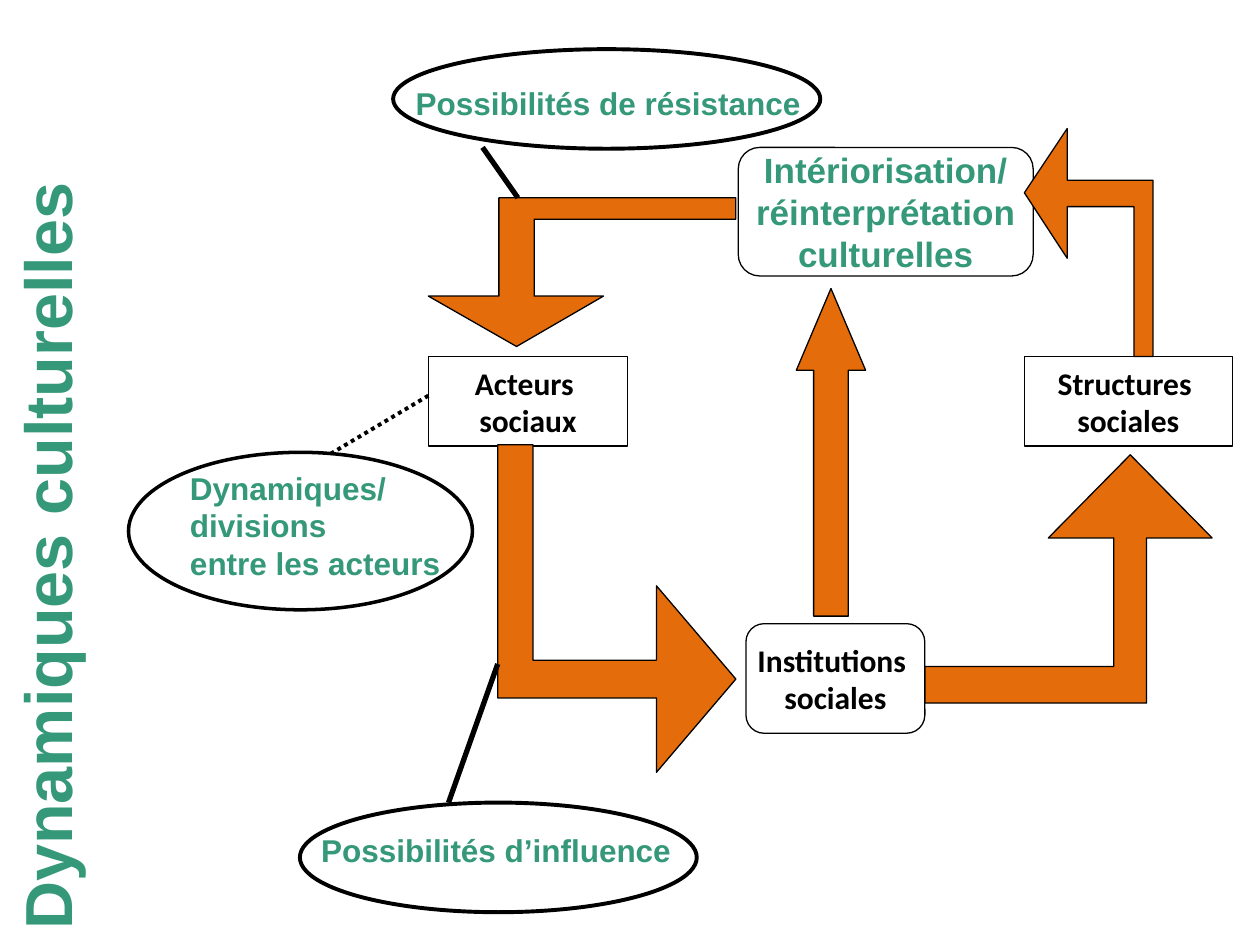
"""Build the "Dynamiques culturelles" cycle slide."""
from dataclasses import dataclass

from pptx import Presentation
from pptx.dml.color import RGBColor
from pptx.enum.dml import MSO_LINE
from pptx.enum.shapes import MSO_CONNECTOR, MSO_SHAPE as Preset
from pptx.enum.text import MSO_ANCHOR, MSO_AUTO_SIZE, PP_ALIGN
from pptx.oxml.ns import qn
from pptx.util import Inches, Pt
from lxml.etree import SubElement

GREEN, ORANGE, BLACK, WHITE = "349879", "E46C0A", "000000", "FFFFFF"
Point = tuple[float, float]
Bounds = tuple[float, float, float, float]


@dataclass
class Node:
    bounds: Bounds
    lines: list[str]
    preset: Preset
    font: str = "Calibri"
    size: int = 18
    color: str = BLACK


@dataclass
class Label:
    bounds: Bounds
    lines: list[str]
    size: int = 18
    wrap: bool = False
    align: PP_ALIGN = PP_ALIGN.LEFT
    vertical: bool = False


@dataclass
class Oval:
    bounds: Bounds
    weight: float = 2.25


@dataclass
class Link:
    start: Point
    end: Point
    weight: float = 3
    dash: MSO_LINE | None = None


NODES = [
    Node((3.4, 2.83, 1.58, 0.71), ["Acteurs ", "sociaux"], Preset.RECTANGLE),
    Node((8.13, 2.83, 1.65, 0.71), ["Structures ", "sociales"], Preset.RECTANGLE),
    Node((5.86, 1.17, 2.34, 1.02), ["Intériorisation/", "réinterprétation", "culturelles"],
         Preset.FLOWCHART_ALTERNATE_PROCESS, "Arial", 20, GREEN),
    Node((5.92, 4.95, 1.42, 0.87), ["Institutions ", "sociales"],
         Preset.FLOWCHART_ALTERNATE_PROCESS),
]
BENT_ARROWS: list[list[Point]] = [
    [(8.97, 3.61), (8.32, 4.27), (8.84, 4.27), (8.84, 5.29), (7.34, 5.29),
     (7.34, 5.58), (9.1, 5.58), (9.1, 4.27), (9.62, 4.27)],
    [(5.84, 5.39), (5.21, 4.65), (5.21, 5.24), (4.23, 5.24), (4.23, 3.53),
     (3.95, 3.53), (3.95, 5.54), (5.21, 5.54), (5.21, 6.13)],
    [(8.13, 1.53), (8.47, 2.05), (8.47, 1.64), (9, 1.64), (9, 2.83),
     (9.15, 2.83), (9.15, 1.43), (8.47, 1.43), (8.47, 1.02)],
    [(4.1, 2.75), (4.79, 2.35), (4.24, 2.35), (4.24, 1.74), (5.84, 1.74),
     (5.84, 1.57), (3.96, 1.57), (3.96, 2.35), (3.4, 2.35)],
]
LINKS = [
    Link((4.11, 1.57), (3.83, 1.17)),
    Link((3.95, 5.27), (3.56, 6.37)),
    Link((3.4, 3.14), (2.61, 3.61), 2.25, MSO_LINE.ROUND_DOT),
]
OVALS = [
    Oval((2.38, 6.37, 3.15, 0.87)),
    Oval((3.12, 0.39, 3.39, 0.79)),
    Oval((1.02, 3.59, 2.73, 1.25), 2),
]
LABELS = [
    Label((3.2, 0.62, 3.29, 0.4), ["Possibilités de résistance"]),
    Label((2.45, 6.55, 2.98, 0.4), ["Possibilités d’influence"]),
    Label((1.41, 3.67, 2.36, 1.01), ["Dynamiques/", "divisions", "entre les acteurs"], wrap=True),
    Label((0, 1.33, 0.84, 6.17), ["Dynamiques culturelles"], 38, True, PP_ALIGN.CENTER, True),
]


def rgb(value: str) -> RGBColor:
    """Turn a hex string into a colour."""
    return RGBColor.from_string(value)


def write(shape, lines: list[str], *, font: str = "Arial", size: int = 18, color: str = GREEN,
          align: PP_ALIGN = PP_ALIGN.CENTER, wrap: bool = False) -> None:
    """Write bold paragraphs into a shape."""
    frame = shape.text_frame
    frame.word_wrap = wrap
    for index, line in enumerate(lines):
        paragraph = frame.add_paragraph() if index else frame.paragraphs[0]
        paragraph.alignment = align
        run = paragraph.add_run()
        run.text = line
        run.font.name, run.font.size, run.font.bold = font, Pt(size), True
        run.font.color.rgb = rgb(color)


def paint(shape, fill: str | None, weight: float = 0.75) -> None:
    """Give a shape its fill and black outline, without a shadow."""
    shape.shadow.inherit = False
    if fill:
        shape.fill.solid()
        shape.fill.fore_color.rgb = rgb(fill)
    else:
        shape.fill.background()
    shape.line.color.rgb = rgb(BLACK)
    shape.line.width = Pt(weight)


def add_preset(slide, preset: Preset, bounds: Bounds, fill: str | None, weight: float = 0.75):
    """Add a painted preset shape."""
    shape = slide.shapes.add_shape(preset, *map(Inches, bounds))
    paint(shape, fill, weight)
    return shape


def add_node(slide, node: Node) -> None:
    """Add a white box of the cycle."""
    shape = add_preset(slide, node.preset, node.bounds, WHITE)
    shape.text_frame.vertical_anchor = MSO_ANCHOR.MIDDLE
    write(shape, node.lines, font=node.font, size=node.size, color=node.color)


def add_bent_arrow(slide, points: list[Point]) -> None:
    """Add an orange arrow with a right-angle bend."""
    corners = [(Inches(x), Inches(y)) for x, y in points]
    builder = slide.shapes.build_freeform(*corners[0])
    builder.add_line_segments(corners[1:], close=True)
    paint(builder.convert_to_shape(), ORANGE)


def add_link(slide, link: Link) -> None:
    """Add a straight black line."""
    connector = slide.shapes.add_connector(
        MSO_CONNECTOR.STRAIGHT, *map(Inches, link.start + link.end))
    connector.line.color.rgb = rgb(BLACK)
    connector.line.width = Pt(link.weight)
    if link.dash:
        connector.line.dash_style = link.dash
    SubElement(connector.element.spPr, qn("a:effectLst"))


def add_label(slide, label: Label) -> None:
    """Add a green text box."""
    box = slide.shapes.add_textbox(*map(Inches, label.bounds))
    write(box, label.lines, size=label.size, align=label.align, wrap=label.wrap)
    box.text_frame.auto_size = MSO_AUTO_SIZE.SHAPE_TO_FIT_TEXT
    if label.vertical:
        box.element.txBody.find(qn("a:bodyPr")).set("vert", "vert270")


def main() -> None:
    """Build and save the presentation."""
    presentation = Presentation()
    presentation.slide_width, presentation.slide_height = Inches(10), Inches(7.5)
    slide = presentation.slides.add_slide(presentation.slide_layouts[6])
    for node in NODES:
        add_node(slide, node)
    up_arrow = add_preset(slide, Preset.UP_ARROW, (6.32, 2.29, 0.55, 2.6), ORANGE)
    up_arrow.adjustments[0], up_arrow.adjustments[1] = 0.5, 1.18
    for points in BENT_ARROWS:
        add_bent_arrow(slide, points)
    for link in LINKS:
        add_link(slide, link)
    for oval in OVALS:
        add_preset(slide, Preset.OVAL, oval.bounds, None, oval.weight)
    for label in LABELS:
        add_label(slide, label)
    presentation.save("out.pptx")


if __name__ == "__main__":
    main()
